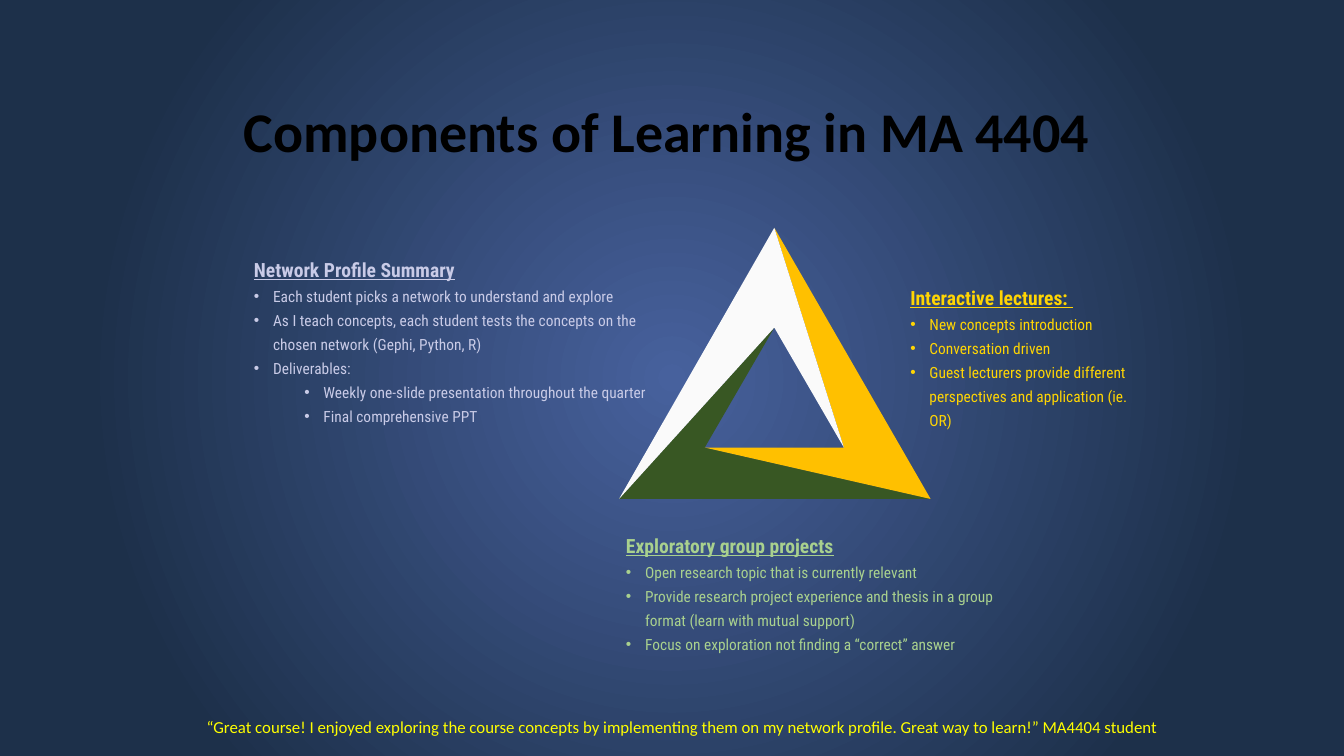
"""Build the slide on the components of learning in MA 4404."""
from dataclasses import dataclass

from lxml import etree
from pptx import Presentation
from pptx.dml.color import RGBColor
from pptx.enum.text import MSO_AUTO_SIZE, PP_ALIGN
from pptx.oxml.ns import qn
from pptx.slide import Slide
from pptx.text.text import TextFrame
from pptx.util import Inches, Pt

GROW = MSO_AUTO_SIZE.SHAPE_TO_FIT_TEXT
LEFT, CENTER = PP_ALIGN.LEFT, PP_ALIGN.CENTER

BLACK = RGBColor(0x00, 0x00, 0x00)
GLOW_BLUE = RGBColor(0x47, 0x61, 0x9D)
NIGHT_BLUE = RGBColor(0x1D, 0x30, 0x4A)
FOREST = RGBColor(0x38, 0x57, 0x23)
AMBER = RGBColor(0xFF, 0xC0, 0x00)
OFF_WHITE = RGBColor(0xFA, 0xFA, 0xFA)
GOLD = RGBColor(0xFF, 0xD5, 0x03)
LAVENDER = RGBColor(0xC9, 0xCB, 0xE7)
LEAF = RGBColor(0xA9, 0xD1, 0x8E)
YELLOW = RGBColor(0xFF, 0xFF, 0x00)

TITLE_FONT = "Calibri"
BODY_FONT = "Roboto Condensed"
BULLET_INDENT = 0.19
LEVEL_STEP = 0.5

Point = tuple[float, float]
Box = tuple[float, float, float, float]

OUTER_TOP, OUTER_LEFT, OUTER_RIGHT = (7.68, 2.26), (6.14, 4.95), (9.23, 4.95)
INNER_TOP, INNER_LEFT, INNER_RIGHT = (7.68, 3.25), (6.99, 4.44), (8.37, 4.44)


@dataclass(frozen=True)
class Blade:
    """One coloured arm of the triangle."""

    corners: tuple[Point, ...]
    color: RGBColor


@dataclass(frozen=True)
class Bullet:
    """One bulleted line of a component."""

    text: str
    level: int = 0


@dataclass(frozen=True)
class Component:
    """A heading with its bullets."""

    box: Box
    color: RGBColor
    heading: str
    bullets: tuple[Bullet, ...]


@dataclass(frozen=True)
class Line:
    """A single line of text in its own box."""

    box: Box
    text: str
    size: int
    color: RGBColor
    bold: bool
    align: PP_ALIGN


BLADES = (
    Blade((INNER_LEFT, INNER_TOP, OUTER_LEFT, OUTER_RIGHT), FOREST),
    Blade((INNER_RIGHT, INNER_LEFT, OUTER_RIGHT, OUTER_TOP), AMBER),
    Blade((INNER_TOP, INNER_RIGHT, OUTER_TOP, OUTER_LEFT), OFF_WHITE),
)

COMPONENTS = (
    Component((8.93, 2.72, 2.42, 1.77), GOLD, "Interactive lectures: ", (
        Bullet("New concepts introduction"),
        Bullet("Conversation driven"),
        Bullet("Guest lecturers provide different perspectives and application (ie. OR)"),
    )),
    Component((2.42, 2.44, 4.46, 2.07), LAVENDER, "Network Profile Summary", (
        Bullet("Each student picks a network to understand and explore"),
        Bullet("As I teach concepts, each student tests the concepts on the "
               "chosen network (Gephi, Python, R)"),
        Bullet("Deliverables:"),
        Bullet("Weekly one-slide presentation throughout the quarter", 1),
        Bullet("Final comprehensive PPT", 1),
    )),
    Component((6.11, 5.18, 3.98, 1.34), LEAF, "Exploratory group projects", (
        Bullet("Open research topic that is currently relevant"),
        Bullet("Provide research project experience and thesis in a group "
               "format (learn with mutual support)"),
        Bullet("Focus on exploration not finding a “correct” answer"),
    )),
)

LINES = (
    Line((2.32, 0.91, 9.03, 0.77), "Components of Learning in MA 4404", 40, BLACK, True, LEFT),
    Line((1.91, 7.06, 9.72, 0.3),
         "“Great course! I enjoyed exploring the course concepts by implementing them "
         "on my network profile. Great way to learn!” MA4404 student",
         12, YELLOW, False, CENTER),
)


def paint_background(page: Slide) -> None:
    """Fill the page with a gradient that spreads from its centre."""
    fill = page.background.fill
    fill.gradient()
    for stop, color, position in zip(fill.gradient_stops, (GLOW_BLUE, NIGHT_BLUE), (0, 0.76)):
        stop.color.rgb = color
        stop.position = position
    gradient = next(page.element.iter(qn("a:gradFill")))
    linear = gradient.find(qn("a:lin"))
    circle = etree.Element(qn("a:path"), {"path": "circle"})
    etree.SubElement(circle, qn("a:fillToRect"), dict.fromkeys("ltrb", "50000"))
    gradient.replace(linear, circle)


def add_blade(page: Slide, blade: Blade) -> None:
    """Draw one arm of the triangle."""
    start, *others = [(Inches(x), Inches(y)) for x, y in blade.corners]
    builder = page.shapes.build_freeform(*start)
    builder.add_line_segments(others, close=True)
    shape = builder.convert_to_shape()
    shape.shadow.inherit = False
    shape.fill.solid()
    shape.fill.fore_color.rgb = blade.color
    shape.line.fill.background()


def add_frame(page: Slide, box: Box) -> TextFrame:
    """Add a wrapping text box and return its text frame."""
    frame = page.shapes.add_textbox(*map(Inches, box)).text_frame
    frame.word_wrap = True
    frame.auto_size = GROW
    return frame


def write(paragraph, text: str, color: RGBColor, **formats) -> None:
    """Write one formatted span into a paragraph."""
    span = paragraph.add_run()
    span.text = text
    span.font.color.rgb = color
    for name, value in formats.items():
        setattr(span.font, name, value)


def add_component(page: Slide, component: Component) -> None:
    """Write a component with its underlined heading and bullets."""
    frame = add_frame(page, component.box)
    heading = frame.paragraphs[0]
    heading.line_spacing = 1.3
    write(heading, component.heading, component.color,
          name=BODY_FONT, size=Pt(14), bold=True, underline=True)
    for bullet in component.bullets:
        paragraph = frame.add_paragraph()
        paragraph.level = bullet.level
        paragraph.line_spacing = 1.3
        properties = paragraph._p.get_or_add_pPr()
        properties.set("marL", str(Inches(BULLET_INDENT + LEVEL_STEP * bullet.level)))
        properties.set("indent", str(-Inches(BULLET_INDENT)))
        etree.SubElement(properties, qn("a:buFont"), typeface="Arial")
        etree.SubElement(properties, qn("a:buChar"), char="•")
        write(paragraph, bullet.text, component.color, name=BODY_FONT, size=Pt(11))


def add_line(page: Slide, line: Line) -> None:
    """Write a single line of text."""
    paragraph = add_frame(page, line.box).paragraphs[0]
    paragraph.alignment = line.align
    write(paragraph, line.text, line.color,
          name=TITLE_FONT, size=Pt(line.size), bold=line.bold)


def main() -> None:
    """Build and save the deck."""
    deck = Presentation()
    deck.slide_width, deck.slide_height = Inches(13.33), Inches(7.5)
    page = deck.slides.add_slide(deck.slide_layouts[6])
    paint_background(page)
    for blade in BLADES:
        add_blade(page, blade)
    for component in COMPONENTS:
        add_component(page, component)
    for line in LINES:
        add_line(page, line)
    deck.save("out.pptx")


if __name__ == "__main__":
    main()
